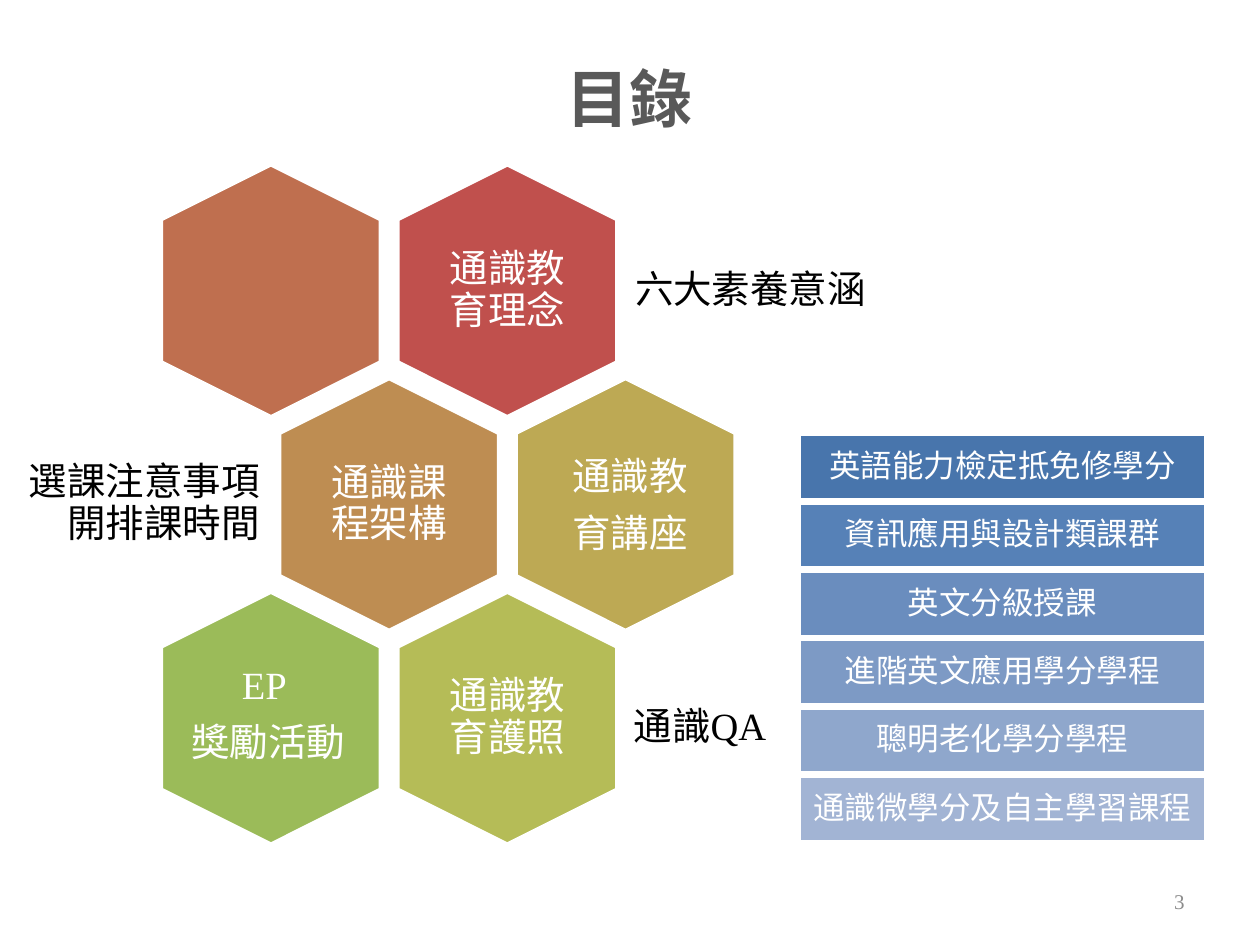
from dataclasses import dataclass

from pptx import Presentation
from pptx.dml.color import RGBColor
from pptx.enum.shapes import MSO_SHAPE
from pptx.enum.text import MSO_ANCHOR, PP_ALIGN
from pptx.util import Pt

HEXAGON, RECTANGLE = MSO_SHAPE.HEXAGON, MSO_SHAPE.RECTANGLE
TOP, MIDDLE = MSO_ANCHOR.TOP, MSO_ANCHOR.MIDDLE
LEFT, CENTER, RIGHT = PP_ALIGN.LEFT, PP_ALIGN.CENTER, PP_ALIGN.RIGHT


@dataclass(frozen=True)
class Theme:
    font: str = "Times New Roman"
    white: str = "FFFFFF"
    black: str = "000000"
    title_color: str = "595959"
    number_color: str = "8C8C8C"
    title_size: float = 36
    topic_size: float = 22
    course_size: float = 18
    number_size: float = 12
    outline: float = 2


@dataclass(frozen=True)
class Box:
    left: float
    top: float
    width: float
    height: float

    def lengths(self) -> tuple:
        return Pt(self.left), Pt(self.top), Pt(self.width), Pt(self.height)


@dataclass(frozen=True)
class TextStyle:
    size: float
    color: str
    align: PP_ALIGN = CENTER
    anchor: MSO_ANCHOR = MIDDLE
    bold: bool = False
    line_spacing: float = 1.0
    space_after: float = 0
    margin_x: float = 7.2
    margin_y: float = 3.6


@dataclass(frozen=True)
class Topic:
    row: int
    column: int
    fill: str
    text: str = ""


@dataclass(frozen=True)
class Label:
    box: Box
    text: str
    style: TextStyle


@dataclass(frozen=True)
class Course:
    text: str
    fill: str


THEME = Theme()
TOPIC = TextStyle(THEME.topic_size, THEME.white, line_spacing=0.9, margin_x=6.5, margin_y=6.5)
NOTE = TextStyle(THEME.topic_size, THEME.black, LEFT, line_spacing=0.9,
                 margin_x=6.5, margin_y=6.5)
NOTE_RIGHT = TextStyle(THEME.topic_size, THEME.black, RIGHT, line_spacing=0.9,
                       margin_x=6.5, margin_y=6.5)
TWO_LINES = TextStyle(THEME.topic_size, THEME.white, anchor=TOP, space_after=6)
COURSE = TextStyle(THEME.course_size, THEME.white, line_spacing=0.9, margin_x=3.6)

# The hexagon is drawn lying down and turned upright by 90 degrees.
HEXAGON_LENGTH, HEXAGON_BREADTH = 144, 125.2
FIRST_CENTER_X, FIRST_CENTER_Y = 154.8, 166.2
COLUMN_STEP, ROW_STEP = 135.1, 122.1
TOPIC_TEXT_WIDTH, TOPIC_TEXT_HEIGHT = 86.4, 98.6
COURSE_BOX, COURSE_STEP = Box(456.5, 248.4, 232.6, 37.2), 39.05

TOPICS = (
    Topic(0, 1, "C0504D", "通識教育理念"),
    Topic(0, 0, "BF6F4F"),
    Topic(1, 0, "BE8D52", "通識課程架構"),
    Topic(1, 1, "BDA954"),
    Topic(2, 1, "B5BC57", "通識教育護照"),
    Topic(2, 0, "9BBB59"),
)
LABELS = (
    Label(Box(36, 10.8, 648, 90), "目錄",
          TextStyle(THEME.title_size, THEME.title_color, bold=True)),
    Label(Box(356.4, 123, 160.6, 86.4), "六大素養意涵", NOTE),
    Label(Box(-0.7, 244.8, 155.5, 86.4), "選課注意事項\v開排課時間", NOTE_RIGHT),
    Label(Box(355.7, 373, 160.6, 86.4), "通識QA", NOTE),
    Label(Box(99.4, 374.4, 108, 67), "EP \n獎勵活動", TWO_LINES),
    Label(Box(306, 254.9, 108, 67), "通識教\n育講座", TWO_LINES),
    Label(Box(516.2, 500.4, 167.8, 28.8), "3",
          TextStyle(THEME.number_size, THEME.number_color, RIGHT)),
)
COURSES = (
    Course("英語能力檢定抵免修學分", "4875AC"),
    Course("資訊應用與設計類課群", "5681B7"),
    Course("英文分級授課", "6A8DBE"),
    Course("進階英文應用學分學程", "7D9AC5"),
    Course("聰明老化學分學程", "8FA7CC"),
    Course("通識微學分及自主學習課程", "A2B4D4"),
)


def set_attributes(target, values: dict) -> None:
    for name, value in values.items():
        setattr(target, name, value)


def write_text(shape, text: str, style: TextStyle) -> None:
    """Fill a shape with text: a newline starts a paragraph, a vertical tab a line."""
    frame = shape.text_frame
    set_attributes(frame, {
        "text": text,
        "word_wrap": True,
        "vertical_anchor": style.anchor,
        "margin_left": Pt(style.margin_x),
        "margin_right": Pt(style.margin_x),
        "margin_top": Pt(style.margin_y),
        "margin_bottom": Pt(style.margin_y),
    })
    for paragraph in frame.paragraphs:
        set_attributes(paragraph, {
            "alignment": style.align,
            "line_spacing": style.line_spacing,
            "space_after": Pt(style.space_after),
        })
        for run in paragraph.runs:
            set_attributes(run.font, {
                "name": THEME.font, "size": Pt(style.size), "bold": style.bold})
            run.font.color.rgb = RGBColor.from_string(style.color)


def add_text(slide, box: Box, text: str, style: TextStyle) -> None:
    write_text(slide.shapes.add_textbox(*box.lengths()), text, style)


def add_filled_shape(slide, kind: MSO_SHAPE, box: Box, fill: str):
    shape = slide.shapes.add_shape(kind, *box.lengths())
    shape.shadow.inherit = False
    shape.fill.solid()
    shape.fill.fore_color.rgb = RGBColor.from_string(fill)
    shape.line.color.rgb = RGBColor.from_string(THEME.white)
    shape.line.width = Pt(THEME.outline)
    return shape


def centered_box(center_x: float, center_y: float, width: float, height: float) -> Box:
    return Box(center_x - width / 2, center_y - height / 2, width, height)


def add_topic(slide, topic: Topic) -> None:
    """Place a honeycomb cell; odd rows are shifted by half a column."""
    center_x = FIRST_CENTER_X + (topic.column + topic.row % 2 / 2) * COLUMN_STEP
    center_y = FIRST_CENTER_Y + topic.row * ROW_STEP
    cell = centered_box(center_x, center_y, HEXAGON_LENGTH, HEXAGON_BREADTH)
    hexagon = add_filled_shape(slide, HEXAGON, cell, topic.fill)
    hexagon.adjustments[0] = 0.25
    hexagon.rotation = 90
    if topic.text:
        text_box = centered_box(center_x, center_y, TOPIC_TEXT_WIDTH, TOPIC_TEXT_HEIGHT)
        add_text(slide, text_box, topic.text, TOPIC)


def add_course(slide, index: int, course: Course) -> None:
    box = Box(COURSE_BOX.left, COURSE_BOX.top + index * COURSE_STEP,
              COURSE_BOX.width, COURSE_BOX.height)
    write_text(add_filled_shape(slide, RECTANGLE, box, course.fill), course.text, COURSE)


def main() -> None:
    presentation = Presentation()
    presentation.slide_width, presentation.slide_height = Pt(720), Pt(540)
    slide = presentation.slides.add_slide(presentation.slide_layouts[6])
    for topic in TOPICS:
        add_topic(slide, topic)
    for index, course in enumerate(COURSES):
        add_course(slide, index, course)
    for label in LABELS:
        add_text(slide, label.box, label.text, label.style)
    presentation.save("out.pptx")


if __name__ == "__main__":
    main()
